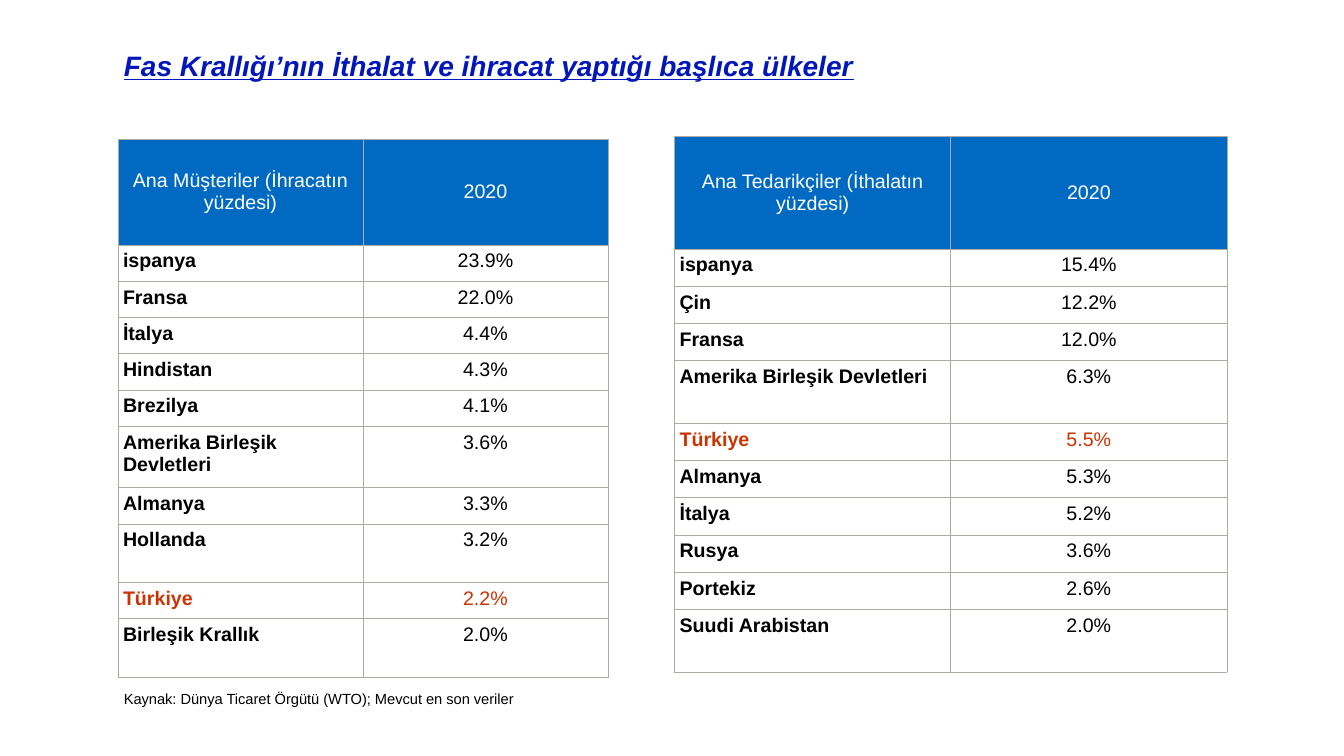
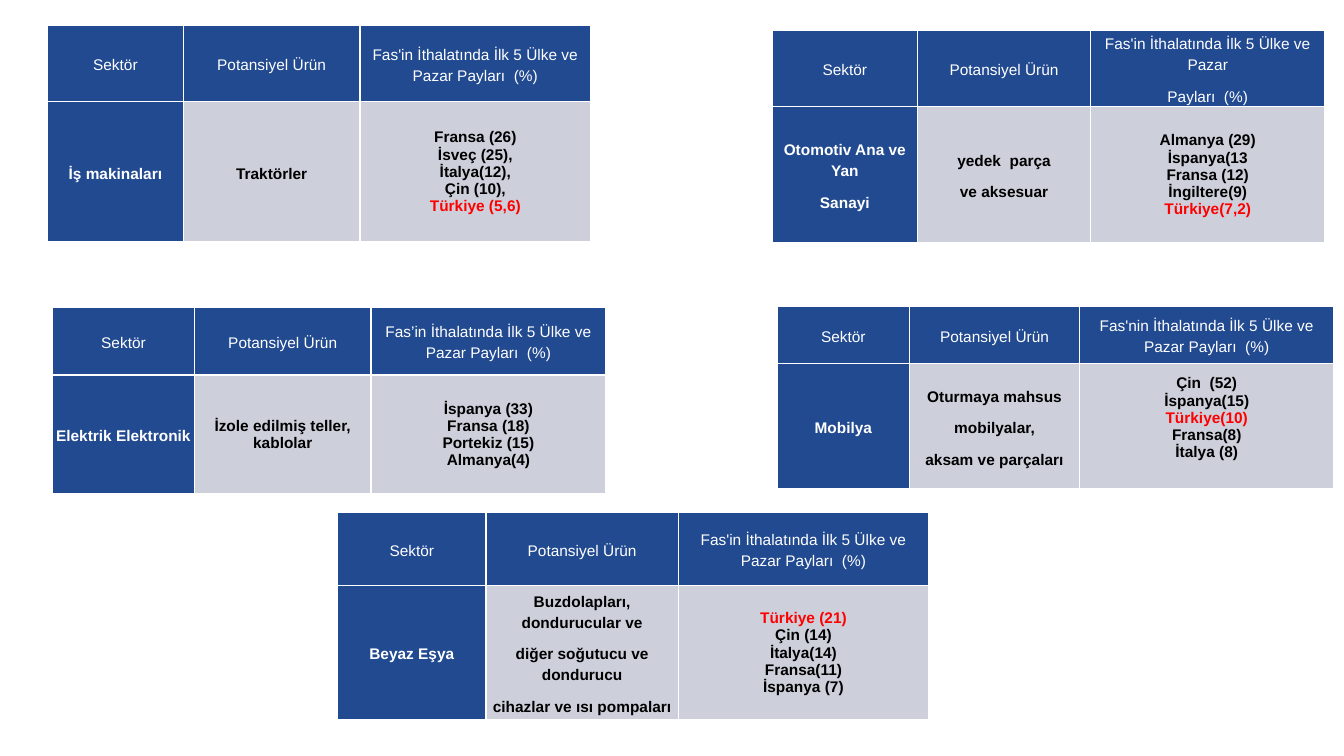
from dataclasses import dataclass

import lxml.etree
import pptx
import pptx.dml.color
import pptx.enum.text
import pptx.oxml.ns
import pptx.util

Inches = pptx.util.Inches
Pt = pptx.util.Pt
CENTER = pptx.enum.text.PP_ALIGN.CENTER
LEFT = pptx.enum.text.PP_ALIGN.LEFT
MIDDLE = pptx.enum.text.MSO_ANCHOR.MIDDLE
TOP = pptx.enum.text.MSO_ANCHOR.TOP

COLOURS = {
    "white": "FFFFFF",
    "black": "000000",
    "title": "0217B9",
    "trade_header": "006AC3",
    "trade_border": "ADA9A3",
    "trade_highlight": "CC3300",
    "sector_dark": "224A90",
    "sector_light": "CDD0DB",
    "sector_highlight": "FF0000",
}
HIGHLIGHTED_COUNTRY = "Türkiye"

# Paragraph formats
LOOSE = {"alignment": CENTER, "line_spacing": Pt(15), "space_after": Pt(7.5)}
TIGHT = {"alignment": CENTER}
FLUSH_LEFT = {"alignment": LEFT}


@dataclass
class CellStyle:
    fill: str
    border: str
    border_width: float
    margin: float
    size: float
    colour: str = "black"
    highlight: str = "black"
    bold: bool = False
    anchor: pptx.enum.text.MSO_ANCHOR = MIDDLE


@dataclass
class TradeTable:
    left: float
    top: float
    column_width: float
    header_height: float
    row_height: float
    tall_rows: dict[str, float]
    heading: str
    shares: dict[str, str]


@dataclass
class SectorTable:
    left: float
    top: float
    column_widths: list[float]
    row_heights: list[float]
    sector: list[str]
    products: list[str]
    shares: list[str]
    heading: list[str]
    product_format: dict
    bottom_margin: float = 0


TRADE_BASE = {"border": "trade_border", "border_width": 0.6, "margin": 0.05, "size": 14}
TRADE_HEADER = CellStyle(fill="trade_header", colour="white", **TRADE_BASE)
TRADE_VALUE = CellStyle(fill="white", highlight="trade_highlight", anchor=TOP, **TRADE_BASE)
TRADE_NAME = CellStyle(fill="white", highlight="trade_highlight", anchor=TOP, bold=True, **TRADE_BASE)

SECTOR_BASE = {"border": "white", "border_width": 1, "margin": 0, "size": 11}
SECTOR_HEADER = CellStyle(fill="sector_dark", colour="white", **SECTOR_BASE)
SECTOR_NAME = CellStyle(fill="sector_dark", colour="white", bold=True, **SECTOR_BASE)
SECTOR_BODY = CellStyle(fill="sector_light", highlight="sector_highlight", bold=True, **SECTOR_BASE)

TRADE_TABLES = [
    TradeTable(
        1.17, 1.38, 2.43, 1.05, 0.36,
        {"Amerika Birleşik Devletleri": 0.61, "Hollanda": 0.58, "Birleşik Krallık": 0.58},
        "Ana Müşteriler (İhracatın yüzdesi)",
        {
            "ispanya": "23.9%", "Fransa": "22.0%", "İtalya": "4.4%", "Hindistan": "4.3%",
            "Brezilya": "4.1%", "Amerika Birleşik Devletleri": "3.6%", "Almanya": "3.3%",
            "Hollanda": "3.2%", "Türkiye": "2.2%", "Birleşik Krallık": "2.0%",
        },
    ),
    TradeTable(
        6.69, 1.35, 2.74, 1.12, 0.37,
        {"Amerika Birleşik Devletleri": 0.62, "Suudi Arabistan": 0.62},
        "Ana Tedarikçiler (İthalatın yüzdesi)",
        {
            "ispanya": "15.4%", "Çin": "12.2%", "Fransa": "12.0%",
            "Amerika Birleşik Devletleri": "6.3%", "Türkiye": "5.5%", "Almanya": "5.3%",
            "İtalya": "5.2%", "Rusya": "3.6%", "Portekiz": "2.6%", "Suudi Arabistan": "2.0%",
        },
    ),
]

SHARE_HEADING = "Fas'in İthalatında İlk 5 Ülke ve Pazar Payları  (%)"
SECTOR_TABLES = [
    SectorTable(
        7.66, 0.3, [1.44, 1.72, 2.32], [0.76, 1.35],
        ["Otomotiv Ana ve Yan", "Sanayi"],
        ["yedek  parça", "ve aksesuar"],
        ["Almanya (29)", "İspanya(13", "Fransa (12)", "İngiltere(9)", "Türkiye(7,2)"],
        ["Fas'in İthalatında İlk 5 Ülke ve Pazar", "Payları  (%)"], LOOSE,
    ),
    SectorTable(
        0.52, 3.05, [1.41, 1.75, 2.33], [0.67, 1.18],
        ["Elektrik Elektronik"],
        ["İzole edilmiş teller, kablolar"],
        ["İspanya (33)", "Fransa (18)", "Portekiz (15)", "Almanya(4)"],
        [SHARE_HEADING.replace("'", "’")], TIGHT,
    ),
    SectorTable(
        0.47, 0.25, [1.35, 1.75, 2.29], [0.76, 1.39],
        ["İş makinaları"],
        ["Traktörler"],
        ["Fransa (26)", "İsveç (25),", "İtalya(12),", "Çin (10),", "Türkiye (5,6)"],
        [SHARE_HEADING], LOOSE,
    ),
    SectorTable(
        7.71, 3.04, [1.31, 1.69, 2.52], [0.57, 1.24],
        ["Mobilya"],
        ["Oturmaya mahsus", "mobilyalar,", "aksam ve parçaları"],
        ["Çin  (52)", "İspanya(15)", "Türkiye(10)", "Fransa(8)", "İtalya (8)"],
        [SHARE_HEADING.replace("Fas'in", "Fas'nin")], LOOSE, bottom_margin=0.17,
    ),
    SectorTable(
        3.35, 5.08, [1.47, 1.91, 2.48], [0.73, 1.33],
        ["Beyaz Eşya"],
        ["Buzdolapları, dondurucular ve", "diğer soğutucu ve dondurucu", "cihazlar ve ısı pompaları"],
        ["Türkiye (21)", "Çin (14)", "İtalya(14)", "Fransa(11)", "İspanya (7)"],
        [SHARE_HEADING], LOOSE,
    ),
]


def set_attributes(target, values: dict) -> None:
    for name, value in values.items():
        setattr(target, name, value)


def rgb(colour: str) -> pptx.dml.color.RGBColor:
    return pptx.dml.color.RGBColor.from_string(COLOURS[colour])


def add_text(paragraph, text: str, colour: str, size: float, **font_format) -> None:
    run = paragraph.add_run()
    run.text = text
    set_attributes(run.font, {"name": "Arial", "size": Pt(size), **font_format})
    run.font.color.rgb = rgb(colour)


def add_text_box(slide, left: float, top: float, width: float, height: float,
                 text: str, colour: str, size: float, **font_format) -> None:
    box = slide.shapes.add_textbox(Inches(left), Inches(top), Inches(width), Inches(height))
    box.text_frame.word_wrap = True
    add_text(box.text_frame.paragraphs[0], text, colour, size, **font_format)


def set_borders(cell, colour: str, width: float) -> None:
    properties = cell._tc.get_or_add_tcPr()
    qualify = pptx.oxml.ns.qn
    for side in ("a:lnL", "a:lnR", "a:lnT", "a:lnB"):
        line = lxml.etree.SubElement(properties, qualify(side), w=str(int(Pt(width))))
        fill = lxml.etree.SubElement(line, qualify("a:solidFill"))
        lxml.etree.SubElement(fill, qualify("a:srgbClr"), val=COLOURS[colour])


def fill_cell(cell, lines: list[str], style: CellStyle, paragraph_format: dict,
              highlighted: bool = False) -> None:
    """Style a cell and write one paragraph per line."""
    set_borders(cell, style.border, style.border_width)
    cell.fill.solid()
    cell.fill.fore_color.rgb = rgb(style.fill)
    margins = {f"margin_{side}": Inches(style.margin) for side in ("left", "top", "right", "bottom")}
    set_attributes(cell, {"vertical_anchor": style.anchor, **margins})
    for index, text in enumerate(lines):
        frame = cell.text_frame
        paragraph = frame.add_paragraph() if index else frame.paragraphs[0]
        set_attributes(paragraph, paragraph_format)
        colour = style.colour
        if style.highlight != "black" and (highlighted or text.startswith(HIGHLIGHTED_COUNTRY)):
            colour = style.highlight
        add_text(paragraph, text, colour, style.size, bold=style.bold)


def add_plain_table(slide, left: float, top: float, widths: list[float], heights: list[float]):
    frame = slide.shapes.add_table(len(heights), len(widths), Inches(left), Inches(top),
                                   Inches(sum(widths)), Inches(sum(heights)))
    table = frame.table
    set_attributes(table, {"first_row": False, "horz_banding": False})
    for column, width in zip(table.columns, widths):
        column.width = Inches(width)
    for row, height in zip(table.rows, heights):
        row.height = Inches(height)
    return table


def add_trade_table(slide, trade: TradeTable) -> None:
    heights = [trade.header_height]
    heights += [trade.tall_rows.get(country, trade.row_height) for country in trade.shares]
    table = add_plain_table(slide, trade.left, trade.top, [trade.column_width] * 2, heights)
    for column, text in enumerate((trade.heading, "2020")):
        fill_cell(table.cell(0, column), [text], TRADE_HEADER, TIGHT)
    for row, (country, share) in enumerate(trade.shares.items(), start=1):
        highlighted = country == HIGHLIGHTED_COUNTRY
        fill_cell(table.cell(row, 0), [country], TRADE_NAME, FLUSH_LEFT, highlighted)
        fill_cell(table.cell(row, 1), [share], TRADE_VALUE, TIGHT, highlighted)


def add_sector_table(slide, sector: SectorTable) -> None:
    table = add_plain_table(slide, sector.left, sector.top, sector.column_widths, sector.row_heights)
    for column, lines in enumerate((["Sektör"], ["Potansiyel Ürün"], sector.heading)):
        fill_cell(table.cell(0, column), lines, SECTOR_HEADER, LOOSE)
    fill_cell(table.cell(1, 0), sector.sector, SECTOR_NAME, LOOSE)
    fill_cell(table.cell(1, 1), sector.products, SECTOR_BODY, sector.product_format)
    fill_cell(table.cell(1, 2), sector.shares, SECTOR_BODY, TIGHT)
    table.cell(1, 2).margin_bottom = Inches(sector.bottom_margin)


def main() -> None:
    presentation = pptx.Presentation()
    set_attributes(presentation, {"slide_width": Inches(13.33), "slide_height": Inches(7.5)})
    blank = presentation.slide_layouts[6]

    # Main trading partners
    partners = presentation.slides.add_slide(blank)
    for trade in TRADE_TABLES:
        add_trade_table(partners, trade)
    add_text_box(partners, 1.13, 0.43, 10.03, 0.44,
                 "Fas Krallığı’nın İthalat ve ihracat yaptığı başlıca ülkeler",
                 "title", 20, bold=True, italic=True, underline=True)
    add_text_box(partners, 1.13, 6.79, 6.67, 0.29,
                 "Kaynak: Dünya Ticaret Örgütü (WTO); Mevcut en son veriler", "black", 10.5)

    # Potential products by sector
    sectors = presentation.slides.add_slide(blank)
    for sector in SECTOR_TABLES:
        add_sector_table(sectors, sector)

    presentation.save("out.pptx")


if __name__ == "__main__":
    main()
